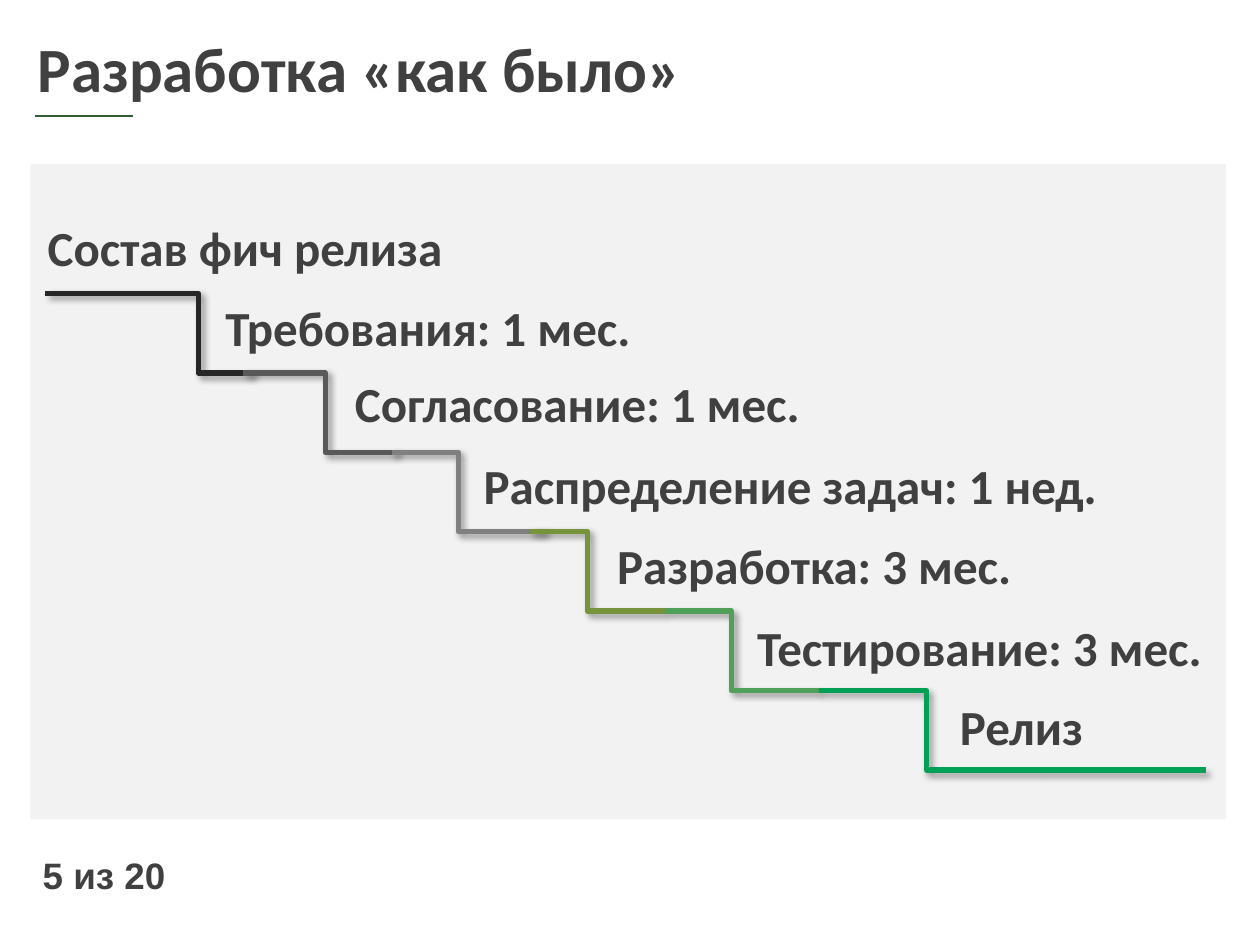
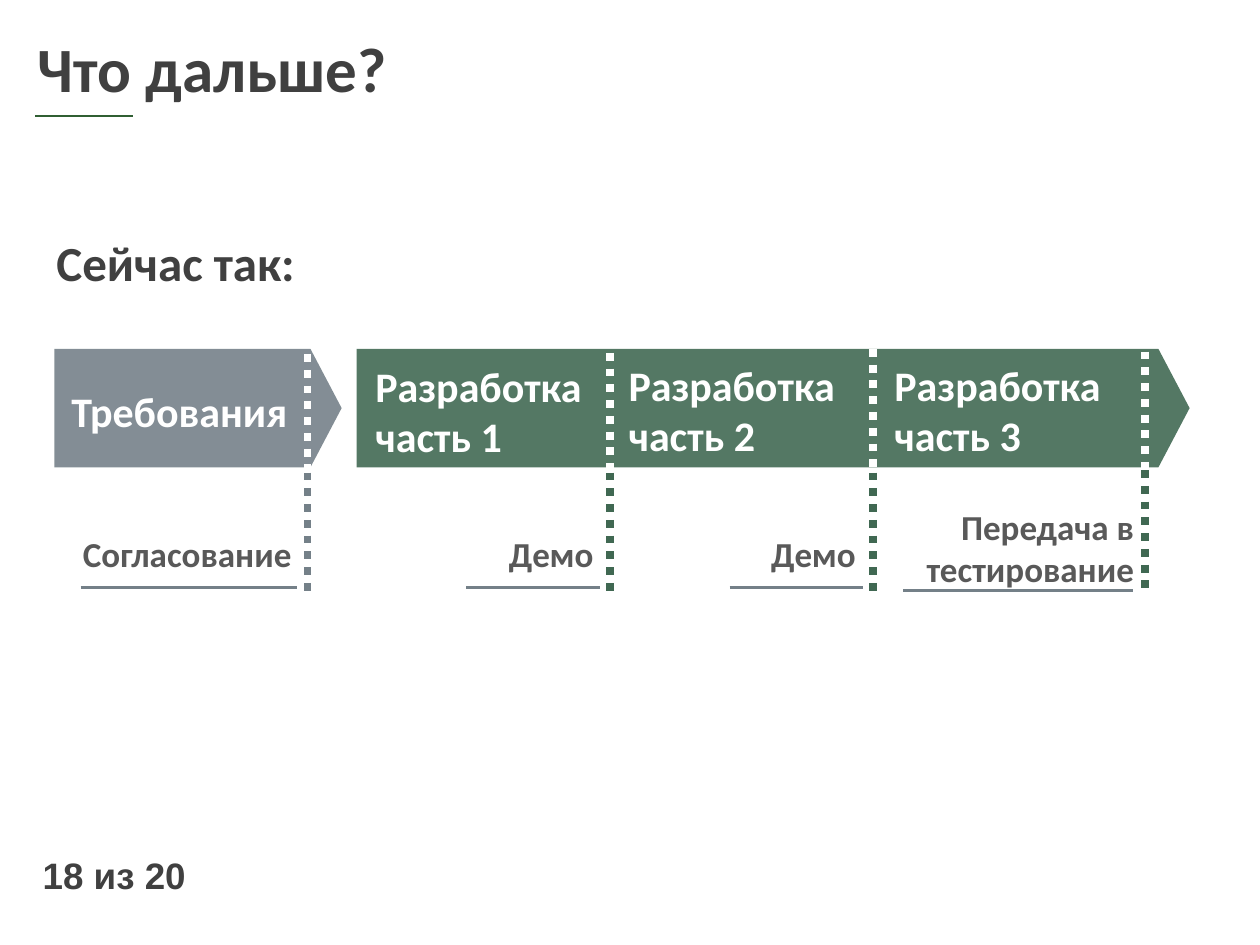
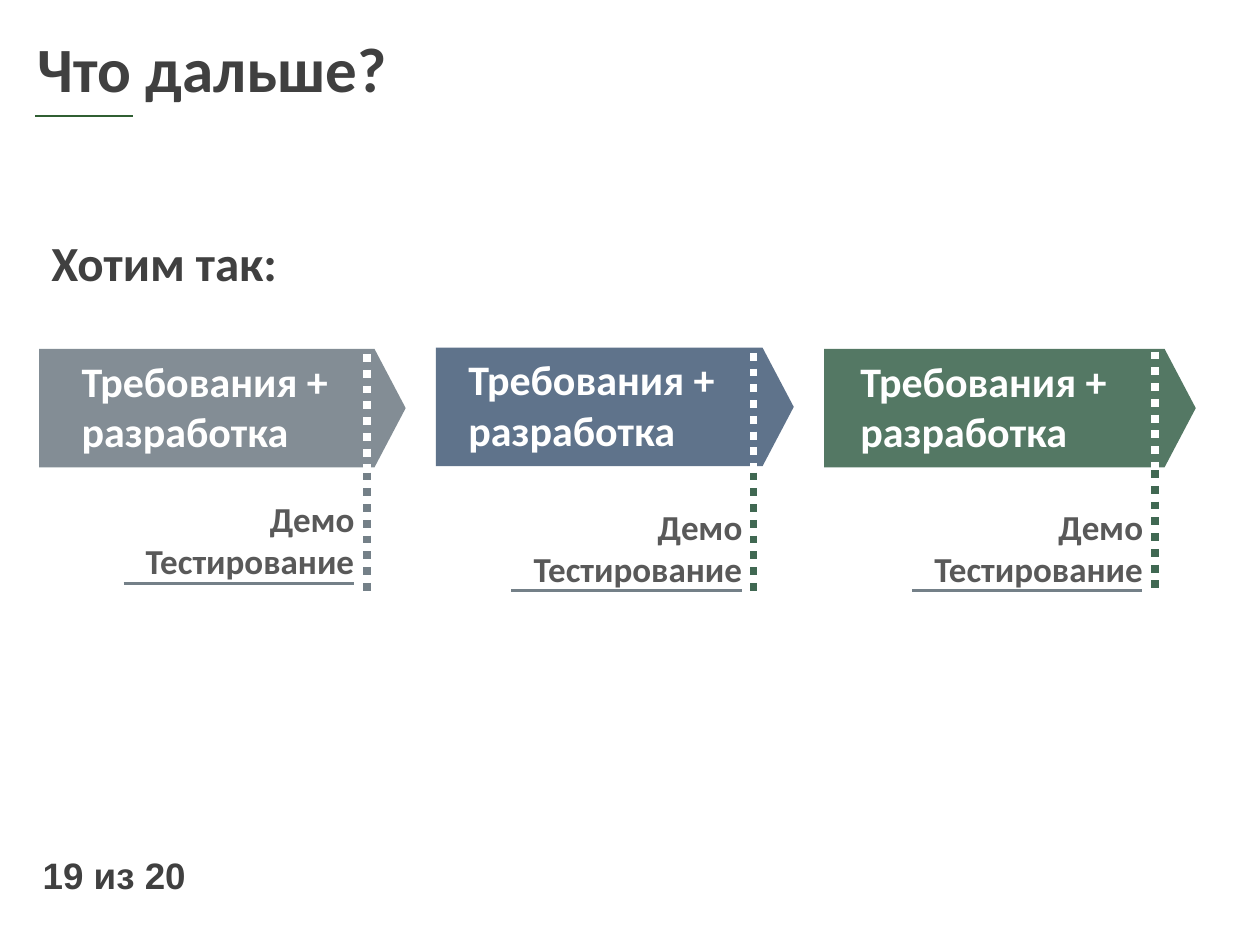
from dataclasses import dataclass

from lxml import etree
from pptx import Presentation
from pptx.dml.color import RGBColor
from pptx.enum.dml import MSO_LINE
from pptx.enum.shapes import MSO_CONNECTOR, MSO_SHAPE
from pptx.enum.text import MSO_ANCHOR, MSO_AUTO_SIZE, PP_ALIGN
from pptx.oxml.ns import qn
from pptx.util import Pt

STRAIGHT, ELBOW = MSO_CONNECTOR.STRAIGHT, MSO_CONNECTOR.ELBOW
RECT, HOME_PLATE = MSO_SHAPE.RECTANGLE, MSO_SHAPE.PENTAGON
LEFT, RIGHT = PP_ALIGN.LEFT, PP_ALIGN.RIGHT
DOTTED = MSO_LINE.ROUND_DOT
TOP, NO_AUTOFIT = MSO_ANCHOR.TOP, MSO_AUTO_SIZE.NONE

INK, CAPTION, WHITE = "404040", "595959", "FFFFFF"
PANEL, ACCENT = "F2F2F2", "305F33"
GREY, GREEN, BLUE = "748088", "406852", "254061"

BODY_FONT, PAGE_FONT = "Calibri", "Arial"
TITLE_SIZE, HEADING_SIZE, ARROW_SIZE, CAPTION_SIZE, PAGE_SIZE = 36, 28, 24, 20, 21
TOTAL_PAGES = 20
STAIR_TOP, RISE = 167.8, 45.36
ARROW_HEIGHT, ARROW_POINT, DOT_LENGTH = 67.7, 0.263, 67.7


@dataclass
class Label:
    text: str
    left: float
    top: float
    width: float
    height: float = 41
    align: PP_ALIGN = LEFT


@dataclass
class Step:
    left: float
    turn: float
    right: float
    color: str


@dataclass
class Arrow:
    left: float
    top: float
    width: float
    color: str
    alpha: int = 89


@dataclass
class Milestone:
    """A dotted line: white across the arrow, coloured below it."""
    x: float
    top: float
    below: float
    color: str


@dataclass
class Underline:
    left: float
    right: float
    y: float


def rgb(color: str) -> RGBColor:
    return RGBColor.from_string(color)


def write(tf, text: str, size: float, color: str, font: str = BODY_FONT,
          align: PP_ALIGN = LEFT) -> None:
    for name, value in {"word_wrap": True, "auto_size": NO_AUTOFIT,
                        "vertical_anchor": TOP}.items():
        setattr(tf, name, value)
    p = tf.paragraphs[0]
    p.alignment = align
    r = p.add_run()
    r.text = text
    for name, value in {"name": font, "size": Pt(size), "bold": True}.items():
        setattr(r.font, name, value)
    r.font.color.rgb = rgb(color)


def add_label(s, label: Label, size: float, color: str, font: str = BODY_FONT) -> None:
    box = s.shapes.add_textbox(Pt(label.left), Pt(label.top),
                               Pt(label.width), Pt(label.height))
    write(box.text_frame, label.text, size, color, font, label.align)


def add_block(s, kind, left: float, top: float, width: float, height: float, color: str):
    sp = s.shapes.add_shape(kind, Pt(left), Pt(top), Pt(width), Pt(height))
    sp.shadow.inherit = False
    sp.fill.solid()
    sp.fill.fore_color.rgb = rgb(color)
    sp.line.fill.background()
    return sp


def add_line(s, x1: float, y1: float, x2: float, y2: float, color: str,
             width: float, kind=STRAIGHT, dash=None):
    """Draw a connector and return it with its empty effect list."""
    line = s.shapes.add_connector(kind, Pt(x1), Pt(y1), Pt(x2), Pt(y2))
    line.line.color.rgb = rgb(color)
    line.line.width = Pt(width)
    if dash is not None:
        line.line.dash_style = dash
    effects = etree.SubElement(line._element.spPr, qn("a:effectLst"))
    return line, effects


def add_step(s, step: Step, top: float) -> None:
    line, effects = add_line(s, step.left, top, step.right, top + RISE,
                             step.color, 3, ELBOW)
    bend = (step.turn - step.left) / (step.right - step.left)
    guides = line._element.spPr.find(qn("a:prstGeom")).get_or_add_avLst()
    etree.SubElement(guides, qn("a:gd"), name="adj1", fmla=f"val {round(bend * 100000)}")
    shadow = etree.SubElement(effects, qn("a:outerShdw"), blurRad=str(Pt(4)),
                              dist=str(Pt(3)), dir="2700000", algn="tl", rotWithShape="0")
    black = etree.SubElement(shadow, qn("a:srgbClr"), val="000000")
    etree.SubElement(black, qn("a:alpha"), val="40000")


def add_arrow(s, arrow: Arrow) -> None:
    sp = add_block(s, HOME_PLATE, arrow.left, arrow.top, arrow.width,
                   ARROW_HEIGHT, arrow.color)
    sp.adjustments[0] = ARROW_POINT
    fill = sp._element.spPr.find(qn("a:solidFill")).find(qn("a:srgbClr"))
    etree.SubElement(fill, qn("a:alpha"), val=str(arrow.alpha * 1000))


def add_milestone(s, mark: Milestone) -> None:
    for top, color in ((mark.top, WHITE), (mark.below, mark.color)):
        add_line(s, mark.x, top, mark.x, top + DOT_LENGTH, color, 4.5, dash=DOTTED)


def new_slide(prs, title: str, page: int, title_width: float):
    s = prs.slides.add_slide(prs.slide_layouts[5])
    add_line(s, 20.2, 66.2, 76.3, 66.2, ACCENT, 1.5)
    for name, value in {"left": 14.4, "top": 13, "width": title_width,
                        "height": 45.4}.items():
        setattr(s.shapes.title, name, Pt(value))
    write(s.shapes.title.text_frame, title, TITLE_SIZE, INK)
    add_label(s, Label(f"{page} из {TOTAL_PAGES}", 17.3, 483.8, 101.5, 32.4),
              PAGE_SIZE, INK, PAGE_FONT)
    return s


def stairs_slide(prs) -> None:
    s = new_slide(prs, "Разработка «как было»", 5, 606.2)
    add_block(s, RECT, 17.3, 93.6, 683.3, 374.4, PANEL)
    steps = [
        Step(25.9, 113.3, 144.7, "262626"),
        Step(139, 185.9, 226.8, "595959"),
        Step(223.9, 261.9, 311.8, "808080"),
        Step(303.1, 335.6, 380.2, "77933C"),
        Step(380.2, 417.9, 468, "50A059"),
        Step(468, 529.4, 689, "00A154"),
    ]
    for i, step in enumerate(steps):
        add_step(s, step, STAIR_TOP + i * RISE)
    labels = [
        Label("Состав фич релиза", 20.2, 121, 264.2),
        Label("Требования: 1 мес.", 121.7, 166.3, 264.2),
        Label("Согласование: 1 мес.", 195.8, 210.2, 297.4),
        Label("Распределение задач: 1 нед.", 269.3, 257, 391),
        Label("Разработка: 3 мес.", 345.6, 302.4, 280.8),
        Label("Тестирование: 3 мес.", 425.5, 349.2, 296.6),
        Label("Релиз", 541.4, 394.6, 115.2),
    ]
    for label in labels:
        add_label(s, label, HEADING_SIZE, INK)


def process_slide(prs, page: int, heading: Label, arrows: list[Arrow],
                  stages: list[Label], milestones: list[Milestone],
                  captions: list[Label], underlines: list[Underline]) -> None:
    s = new_slide(prs, "Что дальше?", page, 371.5)
    add_label(s, heading, HEADING_SIZE, INK)
    for arrow in arrows:
        add_arrow(s, arrow)
    for stage in stages:
        add_label(s, stage, ARROW_SIZE, WHITE)
    for mark in milestones:
        add_milestone(s, mark)
    for caption in captions:
        add_label(s, caption, CAPTION_SIZE, CAPTION)
    for rule in underlines:
        add_line(s, rule.left, rule.y, rule.right, rule.y, GREY, 1.75)


def current_slide(prs) -> None:
    process_slide(
        prs, 18, Label("Сейчас так:", 25.2, 129.6, 201.6),
        arrows=[Arrow(31, 199.4, 164.2, GREY), Arrow(203.8, 199.4, 476, GREEN)],
        stages=[
            Label("Требования", 33.8, 216.7, 146.9, 36),
            Label("Разработка часть 1", 207.4, 202.3, 146.9, 65.5),
            Label("Разработка часть 2", 352.1, 201.6, 146.9, 65.5),
            Label("Разработка часть 3", 504, 201.6, 146.9, 65.5),
        ],
        milestones=[
            Milestone(175.7, 202.3, 270, GREY),
            Milestone(348.5, 201.6, 270, GREEN),
            Milestone(499, 199.4, 270, GREEN),
            Milestone(654.5, 200.9, 268.6, GREEN),
        ],
        captions=[
            Label("Согласование", 40.3, 301, 146.9, 31.7),
            Label("Демо", 283.7, 301, 73.4, 31.7),
            Label("Демо", 432.7, 301, 63.4, 31.7, RIGHT),
            Label("Передача в тестирование", 516.2, 285.1, 139, 55.4, RIGHT),
        ],
        underlines=[
            Underline(46.1, 169.9, 335.5),
            Underline(266.4, 342.7, 335.5),
            Underline(416.9, 493.2, 335.5),
            Underline(516.2, 647.3, 337.7),
        ])


def target_slide(prs) -> None:
    stage, caption = "Требования + разработка", "Демо Тестирование"
    process_slide(
        prs, 19, Label("Хотим так:", 22.3, 129.6, 201.6),
        arrows=[
            Arrow(22.3, 199.4, 209.5, GREY),
            Arrow(249.1, 198.7, 204.5, BLUE, 73),
            Arrow(470.9, 199.4, 212.4, GREEN),
        ],
        stages=[Label(stage, left, top, 167, 65.5)
                for left, top in ((39.6, 199.4), (260.6, 198.7), (484.6, 199.4))],
        milestones=[
            Milestone(209.5, 202.3, 270, GREY),
            Milestone(430.6, 201.6, 270, GREEN),
            Milestone(660.2, 200.9, 268.6, GREEN),
        ],
        captions=[Label(caption, left, top, 139, 55.4, RIGHT)
                  for left, top in ((70.6, 280.8), (292.3, 285.1), (521.3, 285.1))],
        underlines=[Underline(left, left + 131.5, y)
                    for left, y in ((70.6, 333.4), (292.3, 337.7), (521.3, 337.7))])


def main() -> None:
    prs = Presentation()
    prs.slide_width, prs.slide_height = Pt(720), Pt(540)
    stairs_slide(prs)
    current_slide(prs)
    target_slide(prs)
    prs.save("out.pptx")


if __name__ == "__main__":
    main()
